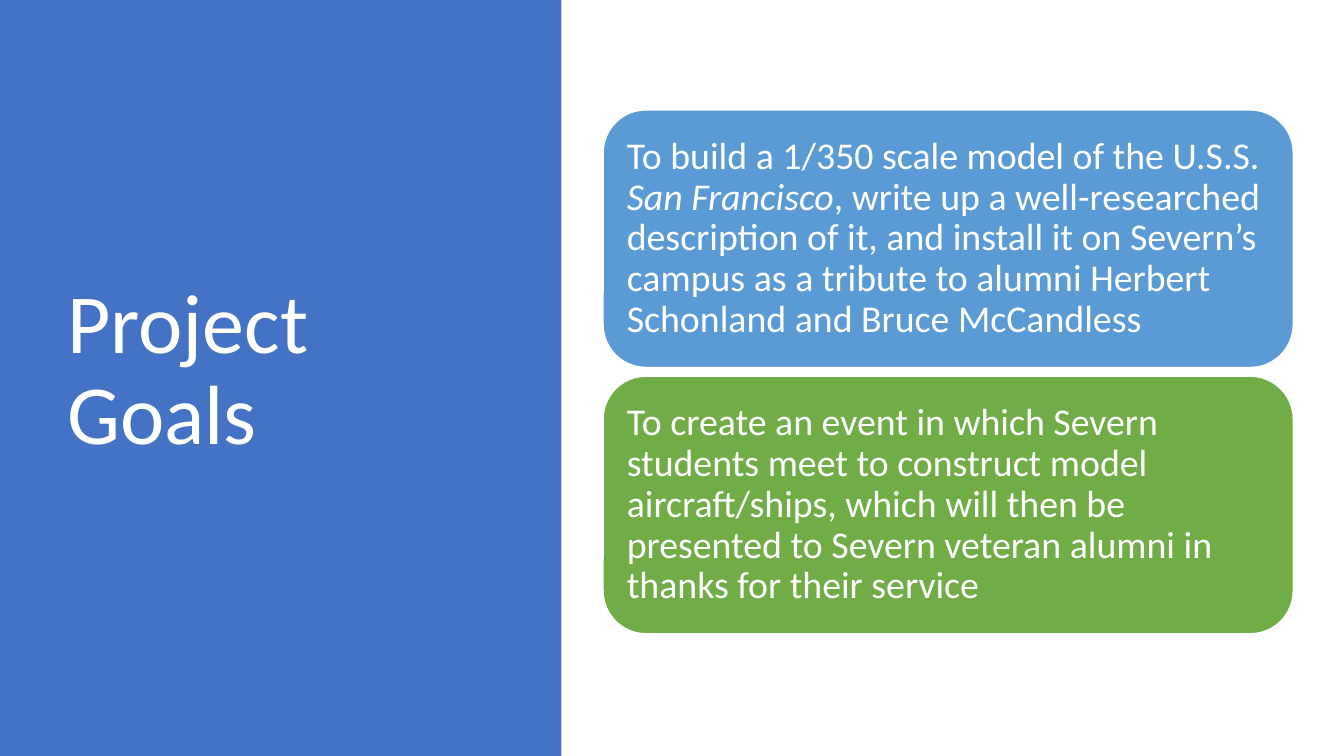
import pptx
import pptx.dml.color
import pptx.enum.shapes
import pptx.enum.text
import pptx.util

Pt = pptx.util.Pt
SHAPES = pptx.enum.shapes.MSO_SHAPE

FONT = "Calibri"
WHITE = "FFFFFF"
PANEL_BLUE = "4472C4"
TITLE = [("Project Goals", False)]
GOALS = [
    ("5B9BD5", [
        ("To build a 1/350 scale model of the U.S.S. ", False),
        ("San Francisco", True),
        (", write up a well-researched description of it, and install it on "
         "Severn’s campus as a tribute to alumni Herbert Schonland and "
         "Bruce McCandless", False),
    ]),
    ("70AD47", [
        ("To create an event in which Severn students meet to construct model "
         "aircraft/ships, which will then be presented to Severn veteran "
         "alumni in thanks for their service", False),
    ]),
]

SLIDE_WIDTH, SLIDE_HEIGHT = 960, 540
PANEL_WIDTH = 401
TITLE_BOX = (41, 49, 299.5, 433.5)
GOAL_LEFT, GOAL_WIDTH, GOAL_HEIGHT, GOAL_GAP = 430.8, 493, 184, 6.2
GOAL_INSET = 8


def color(hex_value):
    return pptx.dml.color.RGBColor.from_string(hex_value)


def add_block(slide, kind, box, fill):
    block = slide.shapes.add_shape(kind, *map(Pt, box))
    block.shadow.inherit = False
    block.fill.solid()
    block.fill.fore_color.rgb = color(fill)
    block.line.fill.background()
    return block


def write(frame, runs, size):
    frame.word_wrap = True
    frame.vertical_anchor = pptx.enum.text.MSO_ANCHOR.MIDDLE
    paragraph = frame.paragraphs[0]
    paragraph.alignment = pptx.enum.text.PP_ALIGN.LEFT
    paragraph.line_spacing = 0.9
    for words, italic in runs:
        run = paragraph.add_run()
        run.text = words
        run.font.name = FONT
        run.font.size = Pt(size)
        run.font.italic = italic
        run.font.color.rgb = color(WHITE)


def main():
    deck = pptx.Presentation()
    deck.slide_width, deck.slide_height = Pt(SLIDE_WIDTH), Pt(SLIDE_HEIGHT)
    slide = deck.slides.add_slide(deck.slide_layouts[6])

    add_block(slide, SHAPES.RECTANGLE, (0, 0, PANEL_WIDTH, SLIDE_HEIGHT), PANEL_BLUE)
    title = slide.shapes.add_textbox(*map(Pt, TITLE_BOX))
    write(title.text_frame, TITLE, 60)

    pitch = GOAL_HEIGHT + GOAL_GAP
    first_top = (SLIDE_HEIGHT - len(GOALS) * pitch + GOAL_GAP) / 2 - 4.4
    for index, (fill, runs) in enumerate(GOALS):
        box = (GOAL_LEFT, first_top + index * pitch, GOAL_WIDTH, GOAL_HEIGHT)
        goal = add_block(slide, SHAPES.ROUNDED_RECTANGLE, box, fill)
        goal.line.color.rgb = color(WHITE)
        goal.line.width = Pt(1)
        frame = goal.text_frame
        frame.margin_left = frame.margin_right = Pt(GOAL_INSET)
        frame.margin_top = frame.margin_bottom = Pt(GOAL_INSET)
        write(frame, runs, 27)

    deck.save("out.pptx")


if __name__ == "__main__":
    main()
